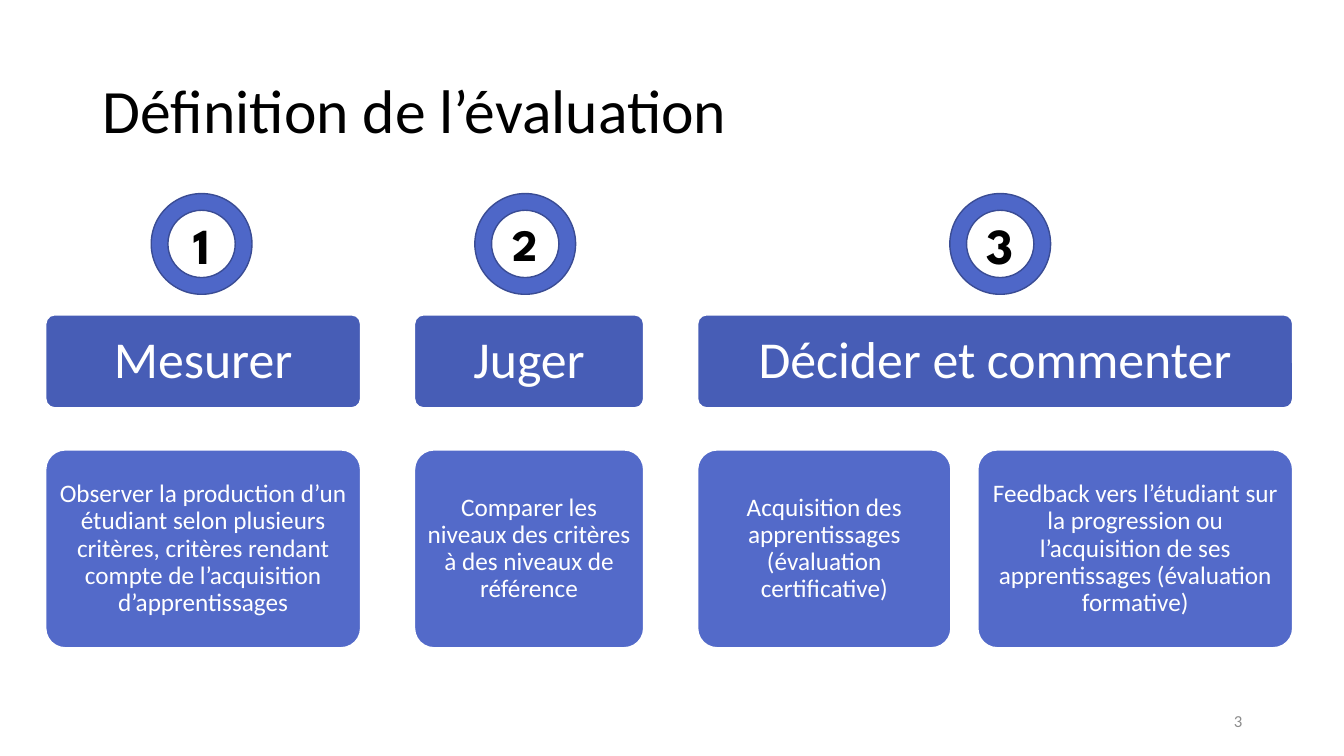
from dataclasses import dataclass

from pptx import Presentation
from pptx import util as u
from pptx.dml import color
from pptx.enum import shapes, text


@dataclass(frozen=True)
class Theme:
    body_font: str = "Calibri"
    number_font: str = "League Spartan"
    black: str = "000000"
    white: str = "FFFFFF"
    grey: str = "8C8C8C"
    badge: str = "4E67C8"
    badge_line: str = "3A4C94"
    header: str = "475DB6"
    card: str = "536AC9"
    title_size: int = 44
    header_size: int = 37
    card_size: int = 18
    page_size: int = 12


class SlideBuilder:
    def __init__(self, presentation, theme):
        self.theme = theme
        self.width = presentation.slide_width
        self.height = presentation.slide_height
        self.slide = presentation.slides.add_slide(presentation.slide_layouts[6])

    def box(self, left, top, width, height):
        return (int(self.width * left / 100), int(self.height * top / 100),
                int(self.width * width / 100), int(self.height * height / 100))

    def add_words(self, shape, words, size, ink, align, font=None, bold=False,
                  spacing=1.0, inset=None):
        frame = shape.text_frame
        frame.word_wrap = True
        frame.vertical_anchor = text.MSO_ANCHOR.MIDDLE
        if inset is not None:
            frame.margin_left = frame.margin_right = u.Inches(inset)
            frame.margin_top = frame.margin_bottom = u.Inches(inset)
        paragraph = frame.paragraphs[0]
        paragraph.alignment = align
        paragraph.line_spacing = spacing
        run = paragraph.add_run()
        run.text = words
        run.font.name = font or self.theme.body_font
        run.font.size = u.Pt(size)
        run.font.bold = bold
        run.font.color.rgb = color.RGBColor.from_string(ink)

    def label(self, box, words, size, ink, align, spacing=1.0):
        shape = self.slide.shapes.add_textbox(*self.box(*box))
        self.add_words(shape, words, size, ink, align, spacing=spacing)

    def filled(self, kind, box, adjustment, fill, line, line_width):
        shape = self.slide.shapes.add_shape(kind, *box)
        shape.adjustments[0] = adjustment
        shape.shadow.inherit = False
        shape.fill.solid()
        shape.fill.fore_color.rgb = color.RGBColor.from_string(fill)
        shape.line.color.rgb = color.RGBColor.from_string(line)
        shape.line.width = u.Pt(line_width)
        return shape

    def badge(self, center, number, size):
        diameter = 7.5
        left, top, side, _ = self.box(center - diameter / 2, 25.6, diameter, 0)
        shape = self.filled(shapes.MSO_SHAPE.DONUT, (left, top, side, side), 0.166,
                            self.theme.badge, self.theme.badge_line, 1)
        self.add_words(shape, number, size, self.theme.black, text.PP_ALIGN.CENTER,
                       font=self.theme.number_font, bold=True, inset=0)

    def panel(self, box, words, fill, size, inset):
        shape = self.filled(shapes.MSO_SHAPE.ROUNDED_RECTANGLE, self.box(*box), 0.1,
                            fill, self.theme.white, 1.5)
        self.add_words(shape, words, size, self.theme.white, text.PP_ALIGN.CENTER,
                       spacing=0.9, inset=inset)

    def header(self, left, width, words):
        self.panel((left, 41.6, width, 12.4), words, self.theme.header,
                   self.theme.header_size, 0.15)

    def card(self, left, width, words):
        self.panel((left, 59.47, width, 26.27), words, self.theme.card,
                   self.theme.card_size, 0.07)


STEPS = [
    ("Mesurer", 15.0, 36, [
        (23.48, "Observer la production d’un étudiant selon plusieurs critères, "
                "critères rendant compte de l’acquisition d’apprentissages")]),
    ("Juger", 39.08, 32, [
        (17.1, "Comparer les niveaux des critères à des niveaux de référence")]),
    ("Décider et commenter", 74.42, 36, [
        (18.9, "Acquisition des apprentissages (évaluation certificative)"),
        (23.48, "Feedback vers l’étudiant sur la progression ou l’acquisition de ses "
                "apprentissages (évaluation formative)")]),
]
FIRST_LEFT, STEP_GAP, CARD_GAP = 3.38, 3.96, 1.95


def main():
    presentation = Presentation()
    presentation.slide_width = u.Inches(13.33)
    presentation.slide_height = u.Inches(7.5)
    theme = Theme()
    builder = SlideBuilder(presentation, theme)

    builder.label((6.9, 5.33, 86.27, 19.33), "Définition de l’évaluation",
                  theme.title_size, theme.black, text.PP_ALIGN.LEFT, spacing=0.9)
    builder.label((70.67, 92.67, 22.5, 5.33), "3",
                  theme.page_size, theme.grey, text.PP_ALIGN.RIGHT)

    left = FIRST_LEFT
    for number, (name, center, size, cards) in enumerate(STEPS, 1):
        builder.badge(center, str(number), size)
        width = sum(card_width for card_width, _ in cards) + CARD_GAP * (len(cards) - 1)
        builder.header(left, width, name)
        card_left = left
        for card_width, words in cards:
            builder.card(card_left, card_width, words)
            card_left += card_width + CARD_GAP
        left += width + STEP_GAP

    presentation.save("out.pptx")


if __name__ == "__main__":
    main()
